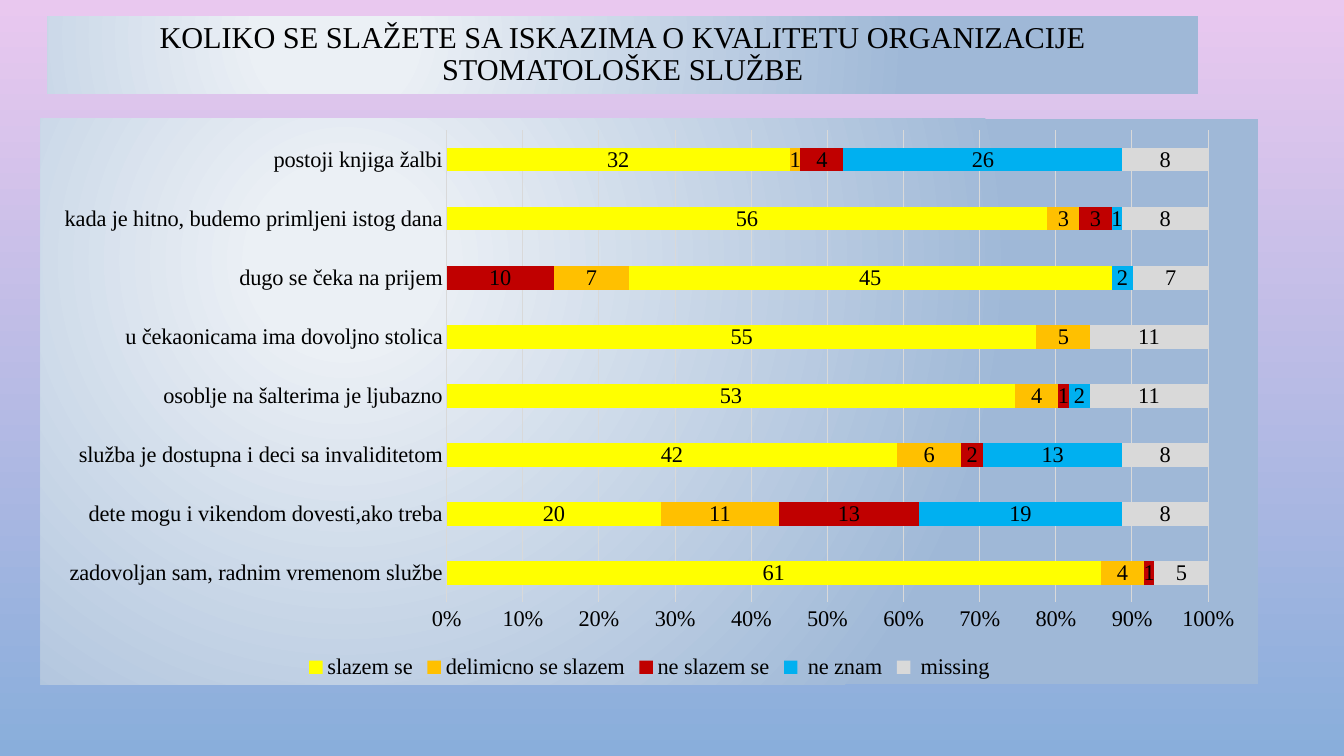
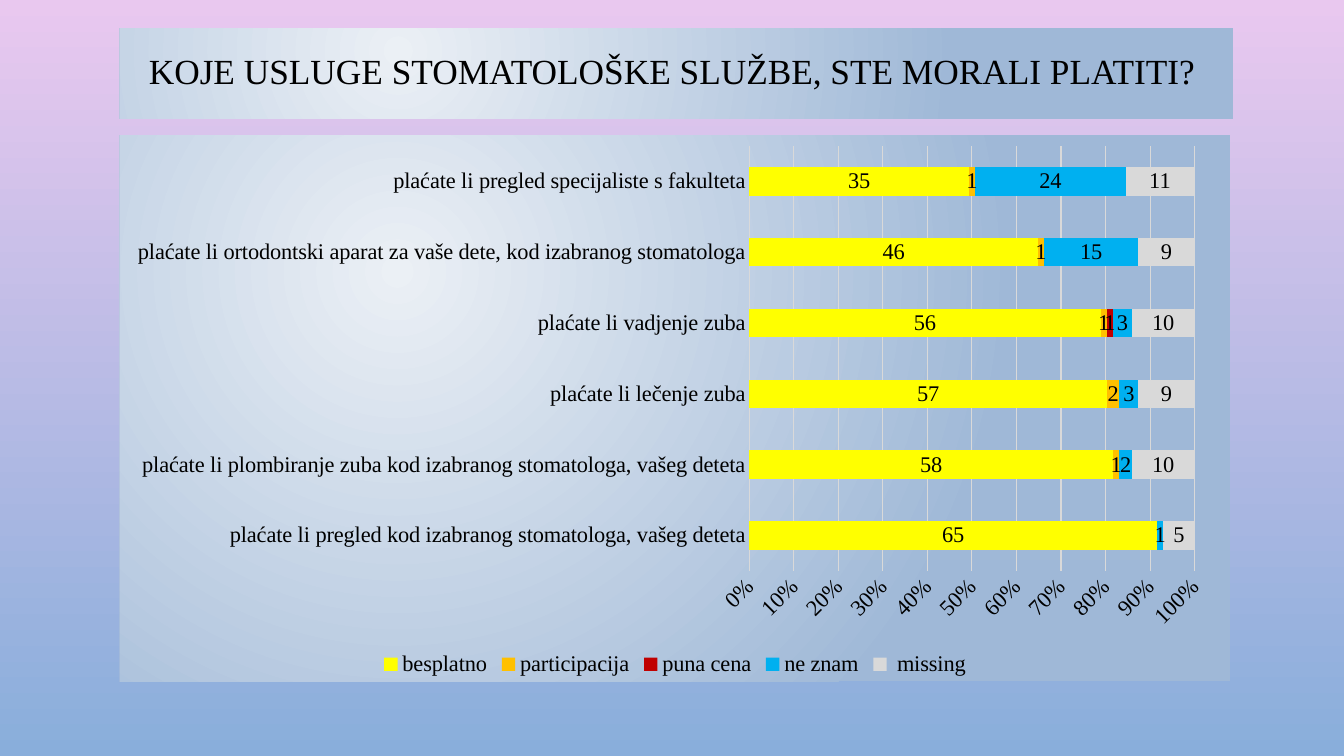
"""Build two survey slides with stacked percentage bar charts."""
from lxml import etree
from pptx import Presentation
from pptx.chart.data import CategoryChartData
from pptx.dml.color import RGBColor
from pptx.enum.chart import (XL_CHART_TYPE, XL_LABEL_POSITION,
                             XL_LEGEND_POSITION, XL_TICK_MARK)
from pptx.enum.shapes import MSO_SHAPE
from pptx.enum.text import MSO_ANCHOR, PP_ALIGN
from pptx.oxml import parse_xml
from pptx.oxml.ns import nsdecls
from pptx.util import Inches, Pt

BAR_STACKED_100 = XL_CHART_TYPE.BAR_STACKED_100
BOTTOM = XL_LEGEND_POSITION.BOTTOM
LABEL_CENTER = XL_LABEL_POSITION.CENTER
NO_TICK = XL_TICK_MARK.NONE
RECTANGLE = MSO_SHAPE.RECTANGLE
MIDDLE = MSO_ANCHOR.MIDDLE
CENTER = PP_ALIGN.CENTER

BLACK = RGBColor(0x00, 0x00, 0x00)
YELLOW = RGBColor(0xFF, 0xFF, 0x00)
ORANGE = RGBColor(0xFF, 0xC0, 0x00)
RED = RGBColor(0xC0, 0x00, 0x00)
BLUE = RGBColor(0x00, 0xB0, 0xF0)
GREY = RGBColor(0xD9, 0xD9, 0xD9)
PINK = RGBColor(0xE9, 0xC8, 0xEF)
SKY = RGBColor(0x89, 0xAE, 0xDB)
PANEL_LIGHT = RGBColor(0xEB, 0xF0, 0xF5)
PANEL_DARK = RGBColor(0x9F, 0xB8, 0xD7)

SERIES_COLORS = [YELLOW, ORANGE, RED, BLUE, GREY]
FONT = "Times New Roman"
CHART_FONT = {"name": FONT, "size": Pt(16)}

SLIDES = [
    {
        "title": "KOLIKO SE SLAŽETE SA ISKAZIMA O KVALITETU ORGANIZACIJE STOMATOLOŠKE SLUŽBE",
        "title_font": {"name": FONT, "size": Pt(21.6)},
        "title_box": (0.47, 0.16, 11.41, 0.77),
        "chart_box": (0.4, 1.18, 12.08, 5.61),
        "light_stop": 13,
        "categories": [
            "zadovoljan sam, radnim vremenom službe",
            "dete mogu i vikendom dovesti,ako treba",
            "služba je dostupna i deci sa invaliditetom",
            "osoblje na šalterima je ljubazno",
            "u čekaonicama ima dovoljno stolica",
            "dugo se čeka na prijem",
            "kada je hitno, budemo primljeni istog dana",
            "postoji knjiga žalbi",
        ],
        "series": [
            ("slazem se", [61, 20, 42, 53, 55, 10, 56, 32]),
            ("delimicno se slazem", [4, 11, 6, 4, 5, 7, 3, 1]),
            ("ne slazem se", [1, 13, 2, 1, None, 45, 3, 4]),
            (" ne znam", [None, 19, 13, 2, None, 2, 1, 26]),
            (" missing", [5, 8, 8, 11, 11, 7, 8, 8]),
        ],
        "point_colors": [(0, 5, RED), (2, 5, YELLOW)],
    },
    {
        "title": "KOJE USLUGE STOMATOLOŠKE SLUŽBE, STE MORALI PLATITI? ",
        "title_font": {"name": FONT, "size": Pt(25.2)},
        "title_box": (1.19, 0.28, 11.04, 0.9),
        "chart_box": (1.19, 1.34, 11.01, 5.42),
        "light_stop": 0,
        "categories": [
            "plaćate li pregled kod izabranog stomatologa, vašeg deteta",
            "plaćate li plombiranje zuba kod izabranog stomatologa, vašeg deteta",
            "plaćate li lečenje zuba",
            "plaćate li vadjenje zuba",
            "plaćate li ortodontski aparat za vaše dete, kod izabranog stomatologa",
            "plaćate li pregled specijaliste s fakulteta",
        ],
        "series": [
            ("besplatno", [65, 58, 57, 56, 46, 35]),
            ("participacija", [None, 1, 2, 1, 1, 1]),
            ("puna cena", [None, None, None, 1, None, None]),
            ("ne znam", [1, 2, 3, 3, 15, 24]),
            (" missing", [5, 10, 9, 10, 9, 11]),
        ],
        "point_colors": [],
    },
]


def style_font(font, values):
    for name, value in values.items():
        setattr(font, name, value)
    font.color.rgb = BLACK


def fill_solid(part, color):
    part.format.fill.solid()
    part.format.fill.fore_color.rgb = color


def style_line(line):
    line.color.rgb = GREY
    line.width = Pt(0.75)


def panel_gradient(light_stop):
    stops = "".join(
        f'<a:gs pos="{pos * 1000}"><a:srgbClr val="{color}"/></a:gs>'
        for pos, color in ((light_stop, PANEL_LIGHT), (100, PANEL_DARK)))
    return parse_xml(
        f'<a:gradFill {nsdecls("a")} rotWithShape="1"><a:gsLst>{stops}</a:gsLst>'
        '<a:path path="circle"><a:fillToRect l="50000" t="50000" r="100000" b="100000"/>'
        '</a:path></a:gradFill>')


def set_background(slide):
    fill = slide.background.fill
    fill.gradient()
    fill.gradient_angle = 270
    for stop, color, position in zip(fill.gradient_stops, (PINK, SKY), (0, 1)):
        stop.color.rgb = color
        stop.position = position


def add_title(slide, spec):
    sp = slide.shapes.add_shape(RECTANGLE, *map(Inches, spec["title_box"]))
    sp.shadow.inherit = False
    sp.line.fill.background()
    sp.fill.background()
    no_fill = sp.fill._xPr.find("{*}noFill")
    no_fill.getparent().replace(no_fill, panel_gradient(spec["light_stop"]))
    tf = sp.text_frame
    tf.word_wrap = True
    tf.vertical_anchor = MIDDLE
    p = tf.paragraphs[0]
    p.alignment = CENTER
    p.line_spacing = 0.9
    r = p.add_run()
    r.text = spec["title"]
    style_font(r.font, spec["title_font"])


def style_axes(chart):
    for axis in (chart.category_axis, chart.value_axis):
        axis.major_tick_mark = axis.minor_tick_mark = NO_TICK
        style_font(axis.tick_labels.font, CHART_FONT)
    chart.category_axis.has_major_gridlines = False
    style_line(chart.category_axis.format.line)
    values = chart.value_axis
    values.format.line.fill.background()
    values.has_major_gridlines = True
    style_line(values.major_gridlines.format.line)
    values.tick_labels.number_format = "0%"
    values.tick_labels.number_format_is_linked = False


def add_bars(slide, spec):
    data = CategoryChartData()
    data.categories = spec["categories"]
    for name, values in spec["series"]:
        data.add_series(name, values)
    chart = slide.shapes.add_chart(
        BAR_STACKED_100, *map(Inches, spec["chart_box"]), data).chart
    style_font(chart.font, CHART_FONT)
    chart.has_title = False
    chart.has_legend = True
    chart.legend.position = BOTTOM
    chart.legend.include_in_layout = False
    style_font(chart.legend.font, CHART_FONT)
    style_axes(chart)

    plot = chart.plots[0]
    plot.gap_width = 150
    plot.overlap = 100
    plot.vary_by_categories = False
    for series, color in zip(plot.series, SERIES_COLORS):
        fill_solid(series, color)
        labels = series.data_labels
        labels.show_value = True
        labels.position = LABEL_CENTER
        style_font(labels.font, CHART_FONT)
    for series_index, point_index, color in spec["point_colors"]:
        fill_solid(plot.series[series_index].points[point_index], color)

    sp_pr = parse_xml(f'<c:spPr {nsdecls("c", "a")}><a:ln><a:noFill/></a:ln></c:spPr>')
    sp_pr.insert(0, panel_gradient(spec["light_stop"]))
    chart._chartSpace.find("{*}txPr").addprevious(sp_pr)
    etree.cleanup_namespaces(sp_pr)


def main():
    prs = Presentation()
    prs.slide_width, prs.slide_height = Inches(13.33), Inches(7.5)
    for spec in SLIDES:
        slide = prs.slides.add_slide(prs.slide_layouts[6])
        set_background(slide)
        add_title(slide, spec)
        add_bars(slide, spec)
    prs.save("out.pptx")


if __name__ == "__main__":
    main()
